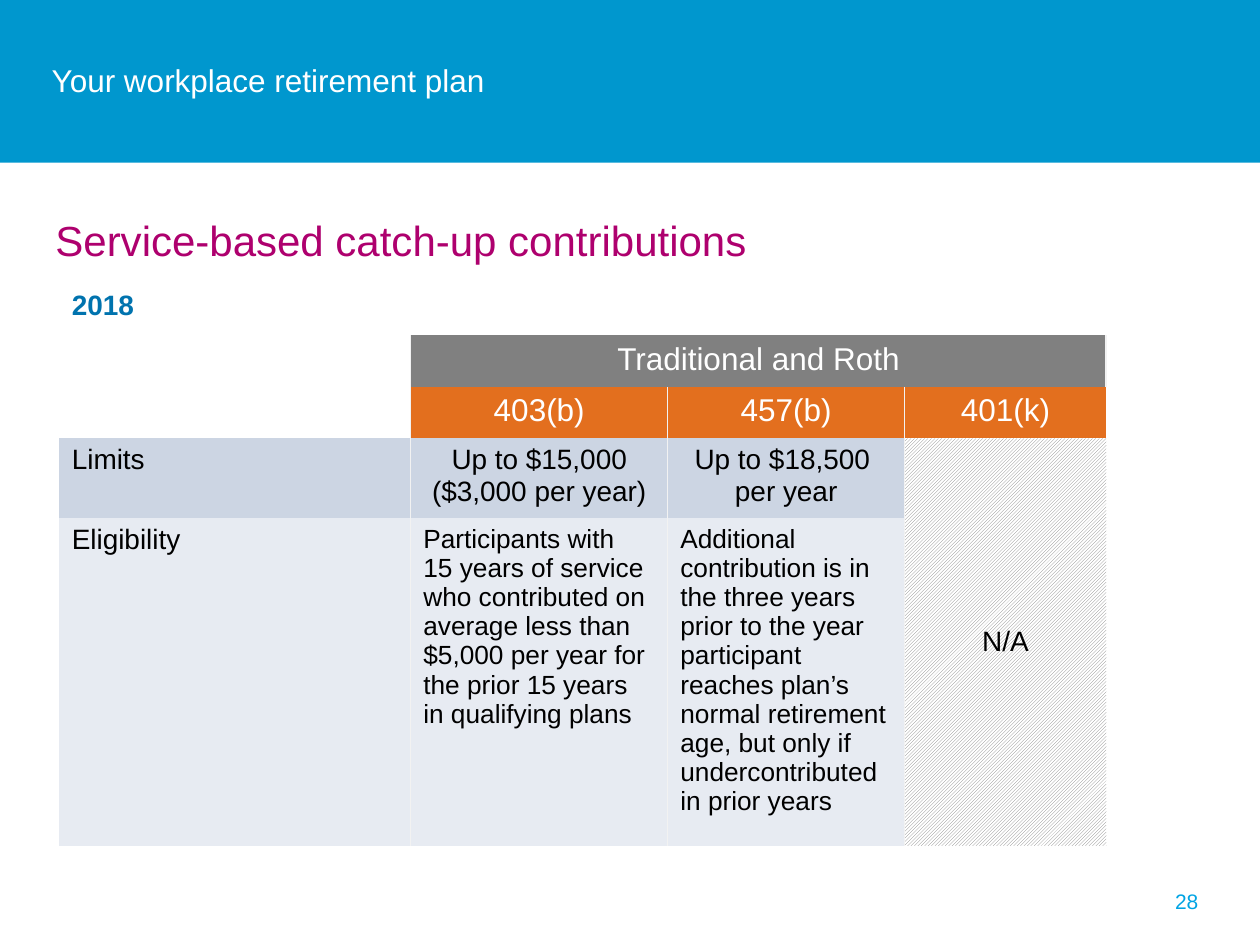
from pptx import Presentation
from pptx.dml.color import RGBColor
from pptx.enum.dml import MSO_PATTERN
from pptx.enum.shapes import MSO_SHAPE
from pptx.enum.text import MSO_ANCHOR, PP_ALIGN
from pptx.oxml import parse_xml
from pptx.oxml.ns import nsdecls
from pptx.util import Inches, Pt

WHITE, BLACK, GRAY = "FFFFFF", "000000", "808080"
ORANGE, BLUE, PALE = "E36F1E", "CCD5E3", "E7EBF2"
LEFT, MID, RIGHT = PP_ALIGN.LEFT, PP_ALIGN.CENTER, PP_ALIGN.RIGHT
PLAIN = "{2D5ABB26-0587-4C30-8999-92F81FD0307C}"
COLS = [2.79, 2.04, 1.88, 1.6]
ROWS = [0.41, 0.41, 0.41, 0.63, 2.6]
CELLS = [
    (0, 0, "2018", 16, "0073AE", LEFT, None),
    (1, 1, "Traditional and Roth", 18, WHITE, MID, GRAY),
    (2, 1, "403(b)", 18, WHITE, MID, ORANGE),
    (2, 2, "457(b)", 18, WHITE, MID, ORANGE),
    (2, 3, "401(k)", 18, WHITE, MID, ORANGE),
    (3, 0, "Limits", 16, BLACK, LEFT, BLUE),
    (3, 1, "Up to $15,000 ($3,000 per year)", 16, BLACK, MID, BLUE),
    (3, 2, "Up to $18,500 \vper year", 16, BLACK, MID, BLUE),
    (3, 3, "N/A", 16, BLACK, MID, None),
    (4, 0, "Eligibility", 16, BLACK, LEFT, PALE),
    (4, 1, "Participants with \v15 years of service who contributed on average "
           "less than $5,000 per year for the prior 15 years in qualifying plans",
     15, BLACK, LEFT, PALE),
    (4, 2, "Additional contribution is in the three years prior to the year "
           "participant reaches plan’s normal retirement age, but only if "
           "undercontributed in prior years", 15, BLACK, LEFT, PALE),
]


def color(code):
    return RGBColor.from_string(code)


def write(frame, text, size, code, align=LEFT):
    frame.text = text
    line = frame.paragraphs[0]
    line.alignment = align
    line.font.name = "Arial"
    line.font.size = Pt(size)
    line.font.color.rgb = color(code)
    return line


def label(slide, box, text, size, code, align=LEFT, anchor=MSO_ANCHOR.MIDDLE, inset=0):
    frame = slide.shapes.add_textbox(*map(Inches, box)).text_frame
    frame.word_wrap = True
    frame.vertical_anchor = anchor
    frame.margin_left = Inches(inset)
    return write(frame, text, size, code, align)


def banner(slide, box):
    left, top, width, height = box
    bar = slide.shapes.add_shape(MSO_SHAPE.RECTANGLE, *map(Inches, box))
    bar.shadow.inherit = False
    bar.fill.solid()
    bar.fill.fore_color.rgb = color("0097CE")
    bar.line.fill.background()
    label(slide, (left + 0.41, top + 0.39, width - 0.79, 0.49),
          "Your workplace retirement plan", 18, WHITE)


def border(cell, side):
    cell._tc.get_or_add_tcPr().append(parse_xml(
        f'<a:{side} {nsdecls("a")} w="12700"><a:solidFill>'
        f'<a:srgbClr val="F2F2F2"/></a:solidFill></a:{side}>'))


def limits(slide, box):
    frame = slide.shapes.add_table(len(ROWS), len(COLS), *map(Inches, box))
    table = frame.table
    table.first_row = table.horz_banding = False
    table._tbl.tblPr[0].text = PLAIN
    for col, width in zip(table.columns, COLS):
        col.width = Inches(width)
    for row, height in zip(table.rows, ROWS):
        row.height = Inches(height)
    for r in range(1, len(ROWS)):
        for c in range(len(COLS)):
            if c > 0:
                border(table.cell(r, c), "lnL")
            if c < len(COLS) - 1:
                border(table.cell(r, c), "lnR")
    for start, end in [((0, 0), (0, 3)), ((1, 1), (1, 3)), ((3, 3), (4, 3))]:
        table.cell(*start).merge(table.cell(*end))
    for r, c, text, size, ink, align, fill in CELLS:
        cell = table.cell(r, c)
        write(cell.text_frame, text, size, ink, align)
        if fill:
            cell.fill.solid()
            cell.fill.fore_color.rgb = color(fill)
    table.cell(0, 0).text_frame.paragraphs[0].font.bold = True
    blank = table.cell(3, 3)
    blank.vertical_anchor = MSO_ANCHOR.MIDDLE
    blank.fill.patterned()
    blank.fill.pattern = MSO_PATTERN.LIGHT_UPWARD_DIAGONAL
    blank.fill.fore_color.rgb = color(GRAY)
    blank.fill.back_color.rgb = color(WHITE)


def main():
    deck = Presentation()
    deck.slide_width, deck.slide_height = Inches(10), Inches(7.5)
    slide = deck.slides.add_slide(deck.slide_layouts[6])
    banner(slide, (0, 0, 10, 1.29))
    label(slide, (0.44, 1.65, 9.16, 0.5), "Service-based catch-up contributions",
          24, "AE006E", anchor=MSO_ANCHOR.TOP)
    label(slide, (7.28, 6.95, 2.33, 0.4), "28", 12, "00A4E4", RIGHT, inset=0.1)
    limits(slide, (0.47, 2.25, sum(COLS), sum(ROWS)))
    deck.save("out.pptx")


if __name__ == "__main__":
    main()
